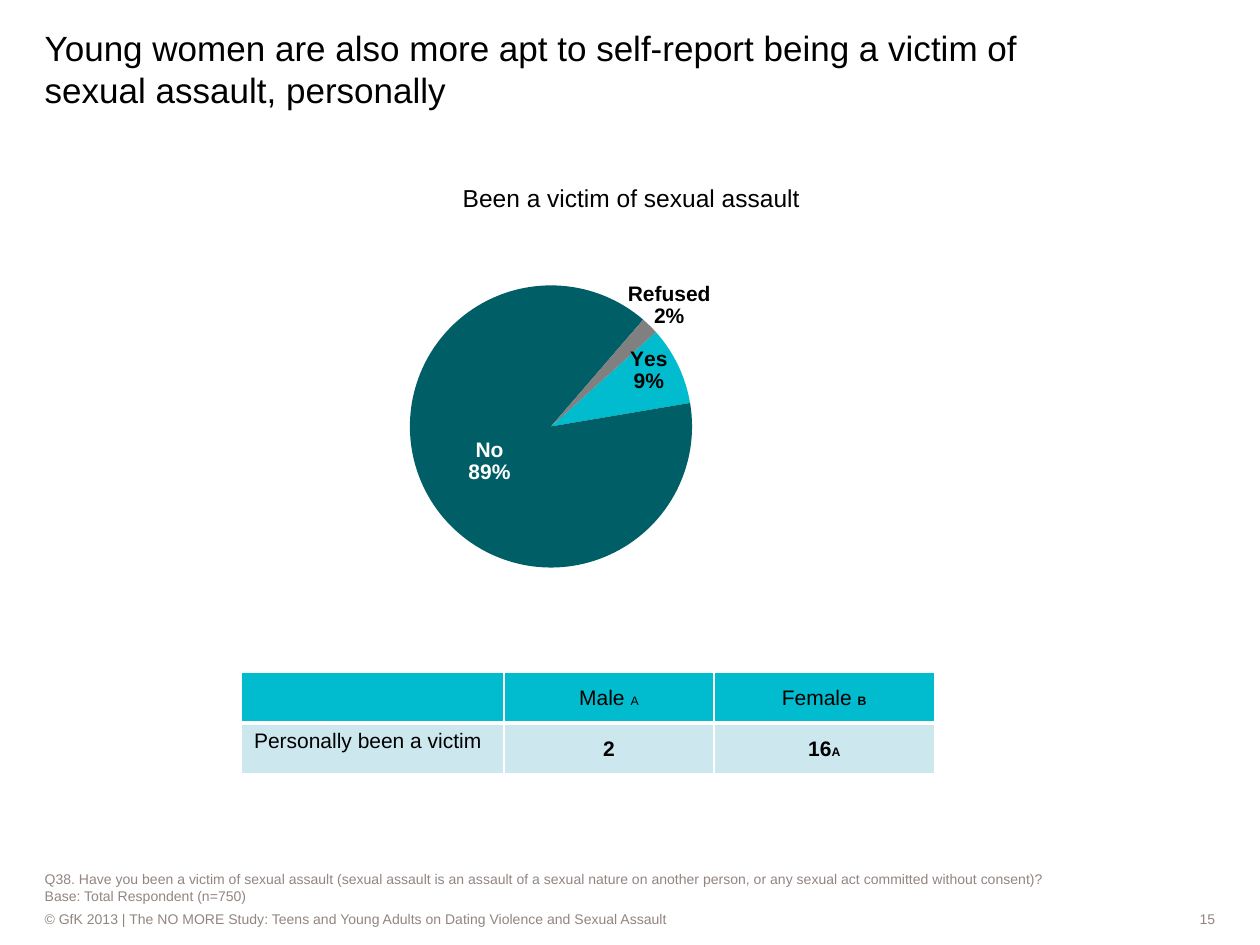
from lxml.etree import SubElement
from pptx import Presentation
from pptx.chart.data import CategoryChartData
from pptx.dml.color import RGBColor
from pptx.enum.chart import XL_CHART_TYPE, XL_LABEL_POSITION
from pptx.enum.shapes import MSO_SHAPE
from pptx.enum.text import MSO_ANCHOR, PP_ALIGN
from pptx.oxml import parse_xml
from pptx.oxml.ns import nsdecls, qn
from pptx.util import Pt

BLACK = RGBColor(0x00, 0x00, 0x00)
WHITE = RGBColor(0xFF, 0xFF, 0xFF)
GRAY = RGBColor(0x80, 0x80, 0x80)
TAUPE = RGBColor(0x92, 0x85, 0x80)
TURQUOISE = RGBColor(0x00, 0xBC, 0xCE)
PETROL = RGBColor(0x00, 0x5E, 0x67)
PALE_BLUE = RGBColor(0xCC, 0xE7, 0xED)
FONT = "Arial"

presentation = Presentation()
presentation.slide_width, presentation.slide_height = Pt(720), Pt(540)
slide = presentation.slides.add_slide(presentation.slide_layouts[6])


def add_text(box, lines, size, color, anchor, align=PP_ALIGN.LEFT, bottom=0, fill=None):
    """Add a text box, or a borderless rectangle when a fill is given."""
    lengths = [Pt(length) for length in box]
    if fill is None:
        shape = slide.shapes.add_textbox(*lengths)
    else:
        shape = slide.shapes.add_shape(MSO_SHAPE.RECTANGLE, *lengths)
        shape.shadow.inherit = False
        shape.fill.solid()
        shape.fill.fore_color.rgb = fill
        shape.line.fill.background()
    frame = shape.text_frame
    frame.word_wrap = True
    frame.vertical_anchor = anchor
    frame.margin_left = frame.margin_top = frame.margin_right = 0
    frame.margin_bottom = Pt(bottom)
    frame.text = "\n".join(lines)
    for paragraph in frame.paragraphs:
        paragraph.alignment = align
        paragraph.font.name = FONT
        paragraph.font.size = Pt(size)
        paragraph.font.color.rgb = color


def add_layout(parent, position, **values):
    """Insert a manual chart layout as the given child of a chart element."""
    layout = parse_xml(f"<c:layout {nsdecls('c')}><c:manualLayout/></c:layout>")
    for name, value in values.items():
        SubElement(layout[0], qn(f"c:{name}")).set("val", str(value))
    parent.insert(position, layout)


# Footer, question note and title
add_text((25.5, 519.5, 556, 11.5),
         ["© GfK 2013 | The NO MORE Study: Teens and Young Adults on Dating Violence and Sexual Assault"],
         8, TAUPE, MSO_ANCHOR.MIDDLE, fill=WHITE)
add_text((592.5, 519.5, 102, 11.5), ["15"], 8, TAUPE, MSO_ANCHOR.MIDDLE, PP_ALIGN.RIGHT, fill=WHITE)
add_text((25.5, 497.3, 610.5, 22.3),
         ["Q38. Have you been a victim of sexual assault (sexual assault is an assault of a sexual nature "
          "on another person, or any sexual act committed without consent)?",
          "Base: Total Respondent (n=750)"],
         8, TAUPE, MSO_ANCHOR.BOTTOM, bottom=2.88)
add_text((25.5, 18.4, 610.5, 44.6),
         ["Young women are also more apt to self-report being a victim of sexual assault, personally"],
         20, BLACK, MSO_ANCHOR.BOTTOM)

# Pie chart
chart_data = CategoryChartData(number_format="0%")
chart_data.categories = ["Yes", "No", "Refused"]
chart_data.add_series("Series 1", (0.09, 0.89, 0.02))
chart = slide.shapes.add_chart(XL_CHART_TYPE.PIE, Pt(221.3), Pt(105.5),
                               Pt(328.3), Pt(288), chart_data).chart
chart.has_legend = False
chart.has_title = False
chart.font.name = FONT
chart.font.size = Pt(18)
chart.font.color.rgb = BLACK
plot = chart.plots[0]
plot.vary_by_categories = True
pie = plot._element
first_angle = pie.find(qn("c:firstSliceAng"))
if first_angle is None:
    first_angle = SubElement(pie, qn("c:firstSliceAng"))
first_angle.set("val", "48")

plot_area = pie.getparent()
for old_layout in plot_area.findall(qn("c:layout")):
    plot_area.remove(old_layout)
add_layout(plot_area, 0, layoutTarget="inner", xMode="edge", yMode="edge",
           x=0.01, y=0.2, w=0.55, h=0.56)

# Slice colours and labels: fill, label colour, label shift
series = plot.series[0]
slices = [(TURQUOISE, BLACK, (0.06, -0.05)),
          (PETROL, WHITE, None),
          (GRAY, BLACK, (0.12, -0.14))]
for index, (fill_color, label_color, shift) in enumerate(slices):
    point = series.points[index]
    point.format.fill.solid()
    point.format.fill.fore_color.rgb = fill_color
    label = point.data_label
    label.font.name = FONT
    label.font.size = Pt(12)
    label.font.bold = True
    label.font.color.rgb = label_color
    label.position = XL_LABEL_POSITION.CENTER

labels = series.data_labels
labels.show_value = True
labels.show_category_name = True
labels.number_format = "0%"
labels.number_format_is_linked = False
for label, (_, _, shift) in zip(labels._element.findall(qn("c:dLbl")), slices):
    label.find(qn("c:showCatName")).set("val", "1")
    label.find(qn("c:showPercent")).set("val", "0")
    SubElement(label, qn("c:separator")).text = "\n"
    if shift:
        add_layout(label, 1, x=shift[0], y=shift[1])

# Chart heading
add_text((253.5, 100.3, 214.5, 25.2), ["Been a victim of sexual assault"],
         14, BLACK, MSO_ANCHOR.MIDDLE, PP_ALIGN.CENTER)

# Table: each cell is a list of (text, size, bold) runs
rows = [
    [[], [("Male ", 12, False), ("A", 7, False)], [("Female ", 12, False), ("B", 7, True)]],
    [[("Personally been a victim", 12, False)], [("2", 12, True)], [("16", 12, True), ("A", 7, True)]],
]
table = slide.shapes.add_table(2, 3, Pt(138), Pt(384), Pt(396), Pt(58.3)).table
for column, width in zip(table.columns, (150, 120, 126)):
    column.width = Pt(width)
for row_index, row in enumerate(rows):
    table.rows[row_index].height = Pt(29.15)
    for column_index, runs in enumerate(row):
        cell = table.cell(row_index, column_index)
        paragraph = cell.text_frame.paragraphs[0]
        if column_index:
            cell.vertical_anchor = MSO_ANCHOR.MIDDLE
            cell.margin_left = cell.margin_top = cell.margin_right = Pt(0.72)
            cell.margin_bottom = 0
            paragraph.alignment = PP_ALIGN.CENTER
        paragraph.font.name = FONT
        paragraph.font.color.rgb = BLACK
        for text, size, bold in runs:
            run = paragraph.add_run()
            run.text = text
            run.font.size = Pt(size)
            run.font.bold = bold
        # White borders, thicker between header and body
        properties = cell._tc.get_or_add_tcPr()
        for side in "LRTB":
            thick = (row_index, side) in ((0, "B"), (1, "T"))
            properties.append(parse_xml(
                f'<a:ln{side} {nsdecls("a")} w="{Pt(3 if thick else 1)}"><a:solidFill>'
                f'<a:srgbClr val="{WHITE}"/></a:solidFill></a:ln{side}>'))
        cell.fill.solid()
        cell.fill.fore_color.rgb = PALE_BLUE if row_index else TURQUOISE

presentation.save("out.pptx")
